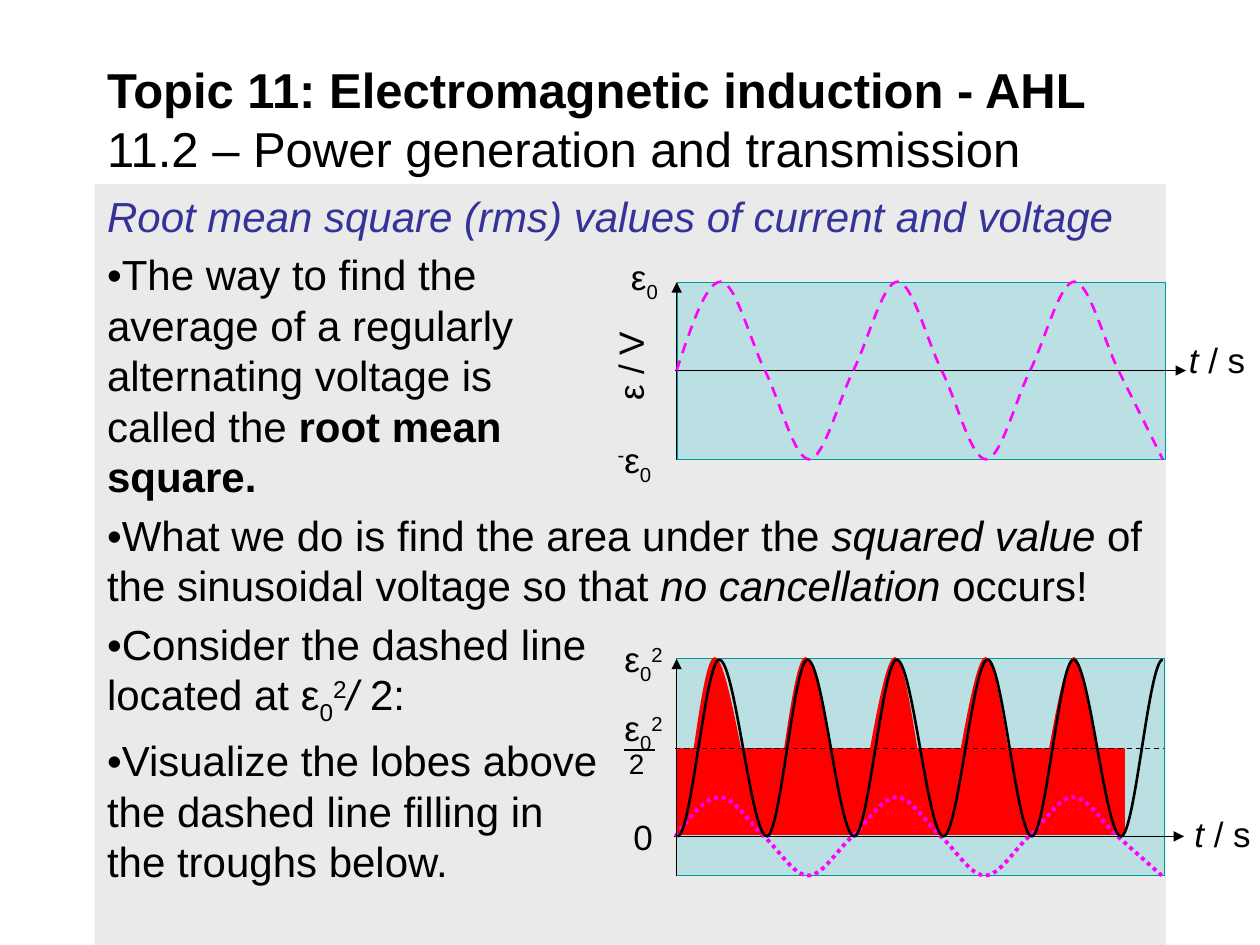
import pptx
import pptx.util
import pptx.dml.color
import pptx.enum.dml
import pptx.enum.shapes
import pptx.enum.text
import pptx.oxml
import pptx.oxml.ns

Cm = pptx.util.Cm
Pt = pptx.util.Pt
qn = pptx.oxml.ns.qn
SHAPE = pptx.enum.shapes.MSO_SHAPE
DASH = pptx.enum.dml.MSO_LINE
ANCHOR = pptx.enum.text.MSO_ANCHOR
ALIGN = pptx.enum.text.PP_ALIGN
SUB = {"baseline": -25}
SUP = {"baseline": 30}
ITALIC = {"italic": True}
SQUARED_PEAK = [("ε", {}), ("0", SUB), ("2", SUP)]
TIME = [(" t ", ITALIC), ("/ s", {})]


def rgb(value):
    return pptx.dml.color.RGBColor.from_string(value)


def add_text(paragraph, text, size=20, color="000000", bold=False, italic=False, baseline=0):
    for index, line in enumerate(text.split("\n")):
        if index:
            paragraph.add_line_break()
        if not line:
            continue
        run = paragraph.add_run()
        run.text = line
        font = run.font
        font.name, font.size, font.bold, font.italic = "Arial", Pt(size), bold, italic
        font.color.rgb = rgb(color)
        if baseline:
            run._r.get_or_add_rPr().set("baseline", str(baseline * 1000))


def style_line(line, color, width, dash=None):
    line.color.rgb = rgb(color)
    line.width = Pt(width)
    if dash:
        line.dash_style = dash


def add_panel(slide, left, top, width, height, fill, outline=None):
    panel = slide.shapes.add_shape(SHAPE.RECTANGLE, Cm(left), Cm(top), Cm(width), Cm(height))
    panel.shadow.inherit = False
    panel.fill.solid()
    panel.fill.fore_color.rgb = rgb(fill)
    if outline:
        style_line(panel.line, outline, 0.75)
    else:
        panel.line.fill.background()
    return panel


def add_label(slide, left, top, width, height, runs, before=10, spacing=None, align=None,
              rotation=0, size=20):
    label = slide.shapes.add_textbox(Cm(left), Cm(top), Cm(width), Cm(height))
    label.rotation = rotation
    frame = label.text_frame
    frame.word_wrap = True
    paragraph = frame.paragraphs[0]
    paragraph.space_before = Pt(before)
    paragraph.line_spacing = spacing
    paragraph.alignment = align
    for text, style in runs:
        add_text(paragraph, text, size=size, **style)


def add_rule(slide, x1, y1, x2, y2, arrow=False, dash=None):
    rule = slide.shapes.add_connector(
        pptx.enum.shapes.MSO_CONNECTOR.STRAIGHT, Cm(x1), Cm(y1), Cm(x2), Cm(y2))
    style_line(rule.line, "000000", 0.75, dash)
    if arrow:
        tail = pptx.oxml.parse_xml(
            f'<a:tailEnd {pptx.oxml.ns.nsdecls("a")} type="triangle"/>')
        rule.line._get_or_add_ln().append(tail)
    rule._element.spPr.append(
        pptx.oxml.parse_xml(f'<a:effectLst {pptx.oxml.ns.nsdecls("a")}/>'))


def add_curve(slide, left, zero, points, color, weight, dash=None, filled=False):
    placed = [(Cm(left + x), Cm(zero - y)) for x, y in points]
    builder = slide.shapes.build_freeform(*placed[0], scale=1.0)
    builder.add_line_segments(placed[1:], close=False)
    curve = builder.convert_to_shape()
    segments = list(curve._element.iter(qn("a:lnTo")))
    for first, second, end in zip(segments[::3], segments[1::3], segments[2::3]):
        bezier = pptx.oxml.parse_xml(f'<a:cubicBezTo {pptx.oxml.ns.nsdecls("a")}/>')
        first.addprevious(bezier)
        for segment in (first, second, end):
            bezier.append(segment[0])
            segment.getparent().remove(segment)
    curve.shadow.inherit = False
    if filled:
        curve.fill.solid()
        curve.fill.fore_color.rgb = rgb(color)
    else:
        curve.fill.background()
    style_line(curve.line, color, weight, dash)


def smooth_points(knots):
    points = [knots[0][:2]]
    for (x1, y1, slope1), (x2, y2, slope2) in zip(knots, knots[1:]):
        third = (x2 - x1) / 3
        points += [(x1 + third, y1 + slope1 * third), (x2 - third, y2 - slope2 * third), (x2, y2)]
    return points


def sine_points(amplitude, width):
    quarter = width / 11
    slope = amplitude / quarter
    heights, slopes = (0, 1, 0, -1), (1, 0, -1, 0)
    knots = [(i * quarter, amplitude * heights[i % 4], slope * slopes[i % 4])
             for i in range(11)]
    knots[0] = (0, 0, 1.5 * slope)
    return smooth_points(knots + [(width, -amplitude, -slope)])


def squared_points(peak):
    turns = (0, 0.84, 1.8, 2.62, 3.56, 4.42, 5.36, 6.25, 7.14, 7.98, 8.94, 9.78)
    return smooth_points([(x, peak * (i % 2), 0) for i, x in enumerate(turns)])


def lobe_points(crest):
    return [(0, 0), (0.03, -0.05), (0.05, -0.08), (0.18, 0.51),
            (0.33, 1.1), (crest - 0.23, 3.56), (crest, 3.56),
            (crest + 0.23, 3.56), (1.4, 1.1), (1.56, 0.51),
            (1.72, -0.08), (1.75, 0.03), (1.8, 0.03)]


def add_title(slide, left, top, width, height):
    title = slide.shapes.add_textbox(Cm(left), Cm(top), Cm(width), Cm(height))
    frame = title.text_frame
    frame.word_wrap = True
    frame.vertical_anchor = ANCHOR.MIDDLE
    heading = frame.paragraphs[0]
    add_text(heading, "Topic 11: Electromagnetic induction - AHL\n", size=28, bold=True)
    add_text(heading, "11.2 – Power generation and transmission", size=28)


def add_body(slide, left, top, width, height):
    body = add_panel(slide, left, top, width, height, "EAEAEA")
    frame = body.text_frame
    frame.word_wrap = True
    frame.vertical_anchor = ANCHOR.TOP
    statements = [
        [("Root mean square (rms) values of current and voltage",
          {"italic": True, "color": "333399"})],
        [("•The way to find the\naverage of a regularly\nalternating voltage is\ncalled the ", {}),
         ("root mean\nsquare.", {"bold": True})],
        [("•What we do is find the area under the ", {}), ("squared value", ITALIC),
         (" of the sinusoidal voltage so that ", {}), ("no cancellation", ITALIC),
         (" occurs!", {})],
        [("•Consider the dashed line\nlocated at ε", {}), ("0", SUB), ("2", SUP),
         ("/ ", ITALIC), ("2:", {})],
        [("•Visualize the lobes above\nthe dashed line filling in\nthe troughs below.", {})],
    ]
    for index, runs in enumerate(statements):
        paragraph = frame.add_paragraph() if index else frame.paragraphs[0]
        paragraph.alignment = ALIGN.LEFT
        paragraph.space_before = Pt(4.8)
        for text, style in runs:
            add_text(paragraph, text, size=24, **style)


def add_voltage_graph(slide, left, top, width, height):
    zero = top + 1.78
    add_panel(slide, left, top, width, height, "BBE0E3", "009999")
    add_rule(slide, left - 0.05, zero, left + width + 0.42, zero, arrow=True)
    add_label(slide, left - 1.19, top - 0.66, 1.6, 1.09, [("ε", {}), ("0", SUB)])
    add_label(slide, left - 2.71, top + 1.14, 3.68, 1.09, [("ε / V", {})], before=4,
              spacing=0.9, align=ALIGN.CENTER, rotation=270)
    add_label(slide, left + 9.86, top + 1.1, 2.59, 1.35, TIME, before=4, spacing=0.9)
    add_label(slide, left - 1.46, top + 3.02, 1.7, 1.09,
              [("-", SUP), ("ε", {}), ("0", SUB)])
    add_rule(slide, left - 0.02, top + height, left - 0.02, top, arrow=True)
    add_curve(slide, left - 0.02, zero, sine_points(1.79, 9.8), "FF00FF", 1.5, DASH.DASH)


def add_squared_graph(slide, left, top, width, height):
    zero, half, peak = top + 3.58, top + 1.81, 3.56
    add_panel(slide, left, top, width, height, "BBE0E3", "009999")
    add_label(slide, left - 1.3, top - 0.55, 2.11, 1.09, SQUARED_PEAK)
    add_label(slide, left + 9.99, top + 3.08, 2.59, 0.94, TIME, before=4, spacing=0.9)
    add_label(slide, left - 1.3, top + 0.84, 2.11, 1.09, SQUARED_PEAK)
    add_label(slide, left - 1.21, top + 1.64, 2.11, 0.94, [("2", {})], before=8, size=16)
    add_rule(slide, left - 1.07, half + 0.03, left - 0.43, half + 0.03)
    add_label(slide, left - 1.12, top + 3.03, 1.22, 1.09, [("0", {})])
    for start, crest in ((-0.02, 0.79), (1.8, 0.8), (3.5, 0.9), (5.33, 0.9), (7.11, 0.9)):
        add_curve(slide, left + start, zero - 0.04, lobe_points(crest), "FF0000", 0.75,
                  filled=True)
    add_panel(slide, left, half, 9.02, 1.73, "FF0000", "FF0000")
    add_rule(slide, left - 0.05, zero, left + width + 0.4, zero, arrow=True)
    add_curve(slide, left - 0.02, zero, sine_points(0.79, 9.8), "FF00FF", 2.25,
              DASH.ROUND_DOT)
    add_rule(slide, left - 0.03, half, left + width, half, dash=DASH.DASH)
    add_rule(slide, left, top + height, left, top, arrow=True)
    add_curve(slide, left + 0.02, zero, squared_points(peak), "000000", 1.5)


def main():
    presentation = pptx.Presentation()
    presentation.slide_width, presentation.slide_height = Cm(25.4), Cm(19.05)
    slide = presentation.slides.add_slide(presentation.slide_layouts[6])
    add_body(slide, 1.91, 3.71, 21.59, 15.34)
    add_voltage_graph(slide, 13.66, 5.69, 9.83, 3.58)
    add_squared_graph(slide, 13.64, 13.28, 9.83, 4.37)
    add_title(slide, 1.91, 1.14, 21.59, 2.49)
    presentation.save("out.pptx")


if __name__ == "__main__":
    main()
